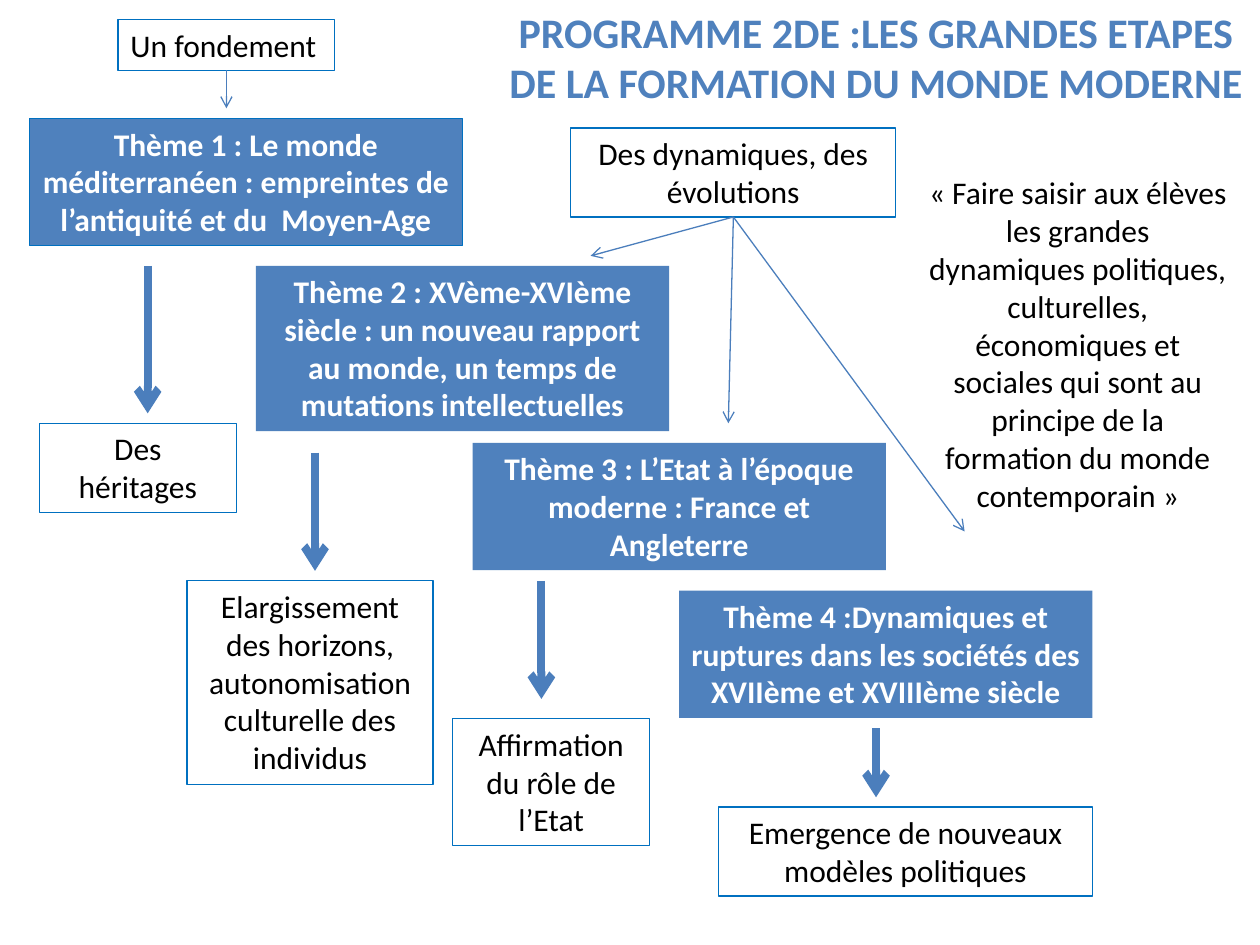
import pptx
import pptx.dml.color
import pptx.enum.shapes
import pptx.enum.text
import pptx.oxml.ns
import pptx.util
from lxml import etree

Pt = pptx.util.Pt
RGBColor = pptx.dml.color.RGBColor
Align = pptx.enum.text.PP_ALIGN

BLUE = RGBColor(0x4F, 0x81, 0xBD)
ARROW_BLUE = RGBColor(0x4B, 0x7E, 0xBC)
BORDER_BLUE = RGBColor(0x00, 0x70, 0xC0)
WHITE = RGBColor(0xFF, 0xFF, 0xFF)
BLACK = RGBColor(0x00, 0x00, 0x00)

FONT = "Calibri"
THIN = 0.75
THICK = 4.5
INSET = 7.2
NARROW_INSET = 3

THEMES = [
    ((16.8, 67.7, 247.5, 72.7), BORDER_BLUE, INSET,
     "Thème 1 : Le monde méditerranéen : empreintes de l’antiquité et du  Moyen-Age"),
    ((146.2, 151.9, 236.2, 94.5), None, INSET,
     "Thème 2 : XVème-XVIème siècle : un nouveau rapport au monde, "
     "un temps de mutations intellectuelles"),
    ((270, 253.1, 236.2, 72.7), None, INSET,
     "Thème 3 : L’Etat à l’époque moderne : France et Angleterre"),
    ((388.1, 337.5, 236.2, 72.7), None, NARROW_INSET,
     "Thème 4 :Dynamiques et ruptures dans les sociétés des XVIIème et XVIIIème siècle"),
]

NOTES = [
    ((67.5, 11.2, 123.7, 29.1), Align.LEFT, "Un fondement"),
    ((326.2, 73.1, 185.6, 50.9), Align.CENTER, "Des dynamiques, des évolutions"),
    ((22.5, 241.9, 112.5, 50.9), Align.CENTER, "Des héritages"),
    ((106.9, 331.9, 140.6, 116.3), Align.CENTER,
     "Elargissement des horizons, autonomisation culturelle des individus"),
    ((258.7, 410.6, 112.5, 72.7), Align.CENTER, "Affirmation du rôle de l’Etat"),
    ((410.6, 461.2, 213.7, 50.9), Align.CENTER, "Emergence de nouveaux modèles politiques"),
]

QUOTE = [
    "« Faire saisir aux élèves les grandes dynamiques politiques, culturelles,",
    "économiques et sociales qui sont au principe de la formation du monde contemporain »",
]

THEME_ARROWS = [
    (84.4, 151.9, 236.2),
    (180, 258.7, 326.2),
    (309.4, 331.9, 399.4),
    (500.6, 416.2, 455.6),
]

DYNAMICS_START = (419.1, 124)
DYNAMICS_ENDS = [(337.5, 146.2), (416.2, 241.9), (551.2, 303.7)]


def add_text(page, place, lines, size=18, color=BLACK, bold=False,
             align=Align.CENTER, fill=None, border=None, inset=INSET):
    box = page.shapes.add_textbox(*map(Pt, place))
    if fill is not None:
        box.fill.solid()
        box.fill.fore_color.rgb = fill
    if border is not None:
        box.line.color.rgb = border
        box.line.width = Pt(THIN)
    frame = box.text_frame
    frame.word_wrap = True
    frame.margin_left = frame.margin_right = Pt(inset)
    para = frame.paragraphs[0]
    para.alignment = align
    for index, line in enumerate(lines):
        if index:
            para.add_line_break()
        span = para.add_run()
        span.text = line
        span.font.name = FONT
        span.font.size = Pt(size)
        span.font.bold = bold
        span.font.color.rgb = color


def add_arrow(page, start, end, width):
    arrow = page.shapes.add_connector(
        pptx.enum.shapes.MSO_CONNECTOR.STRAIGHT, *map(Pt, start + end))
    arrow.line.color.rgb = ARROW_BLUE
    arrow.line.width = Pt(width)
    qualified = pptx.oxml.ns.qn
    etree.SubElement(arrow.get_or_add_ln(), qualified("a:tailEnd"), type="arrow")
    etree.SubElement(arrow._element.spPr, qualified("a:effectLst"))


def main():
    deck = pptx.Presentation()
    deck.slide_width, deck.slide_height = Pt(720), Pt(540)
    page = deck.slides.add_slide(deck.slide_layouts[6])

    for place, border, inset, text in THEMES:
        add_text(page, place, [text], color=WHITE, bold=True, fill=BLUE,
                 border=border, inset=inset)
    for place, align, text in NOTES:
        add_text(page, place, [text], align=align, border=BORDER_BLUE)
    add_text(page, (523.1, 95.6, 185.6, 225.4), QUOTE)
    add_text(page, (281.2, 0, 438.8, 65.4),
             ["PROGRAMME 2DE :LES GRANDES ETAPES DE LA FORMATION DU MONDE MODERNE"],
             size=24, color=BLUE, bold=True)

    for x, top, bottom in THEME_ARROWS:
        add_arrow(page, (x, top), (x, bottom), THICK)
    for end in DYNAMICS_ENDS:
        add_arrow(page, DYNAMICS_START, end, THIN)
    add_arrow(page, (129.4, 40.3), (129.4, 61.9), THIN)

    deck.save("out.pptx")


if __name__ == "__main__":
    main()
